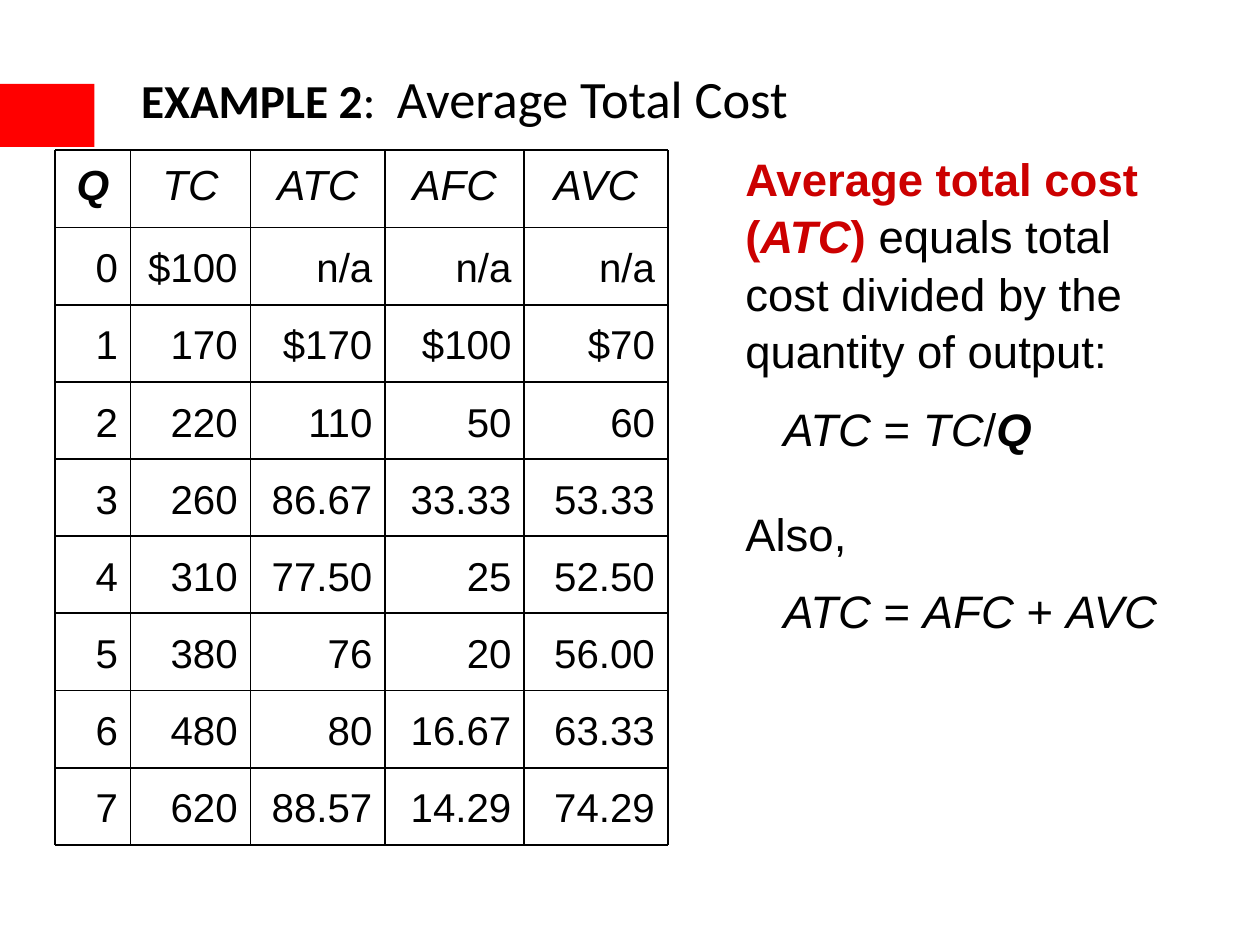
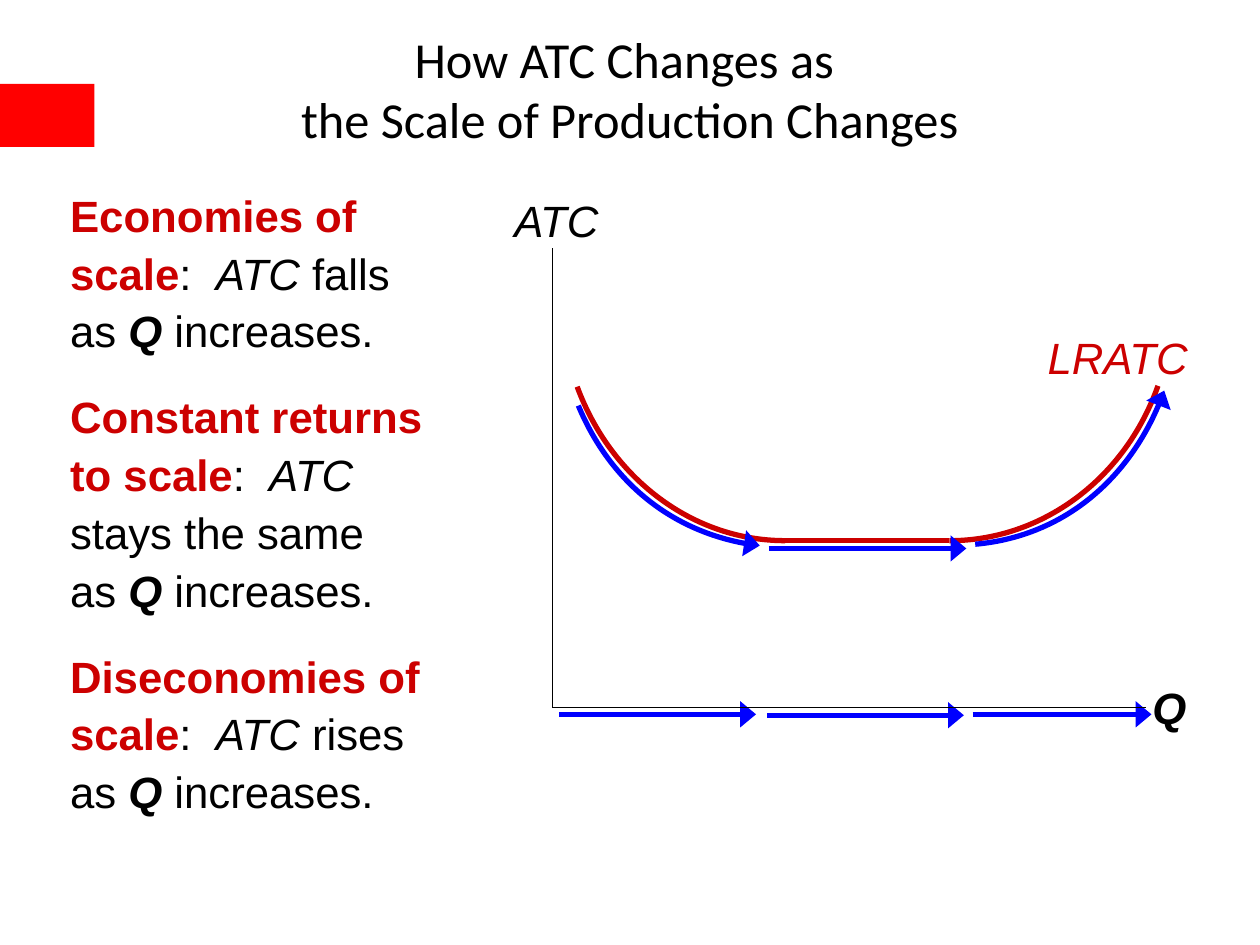
from dataclasses import dataclass
from itertools import accumulate
from typing import NamedTuple

import pptx
import pptx.util
from lxml import etree
from pptx.dml.color import RGBColor
from pptx.enum.shapes import MSO_CONNECTOR, MSO_SHAPE
from pptx.enum.text import MSO_ANCHOR, PP_ALIGN
from pptx.oxml.ns import qn
from pptx.util import Pt


@dataclass(frozen=True)
class Theme:
    black: str = "000000"
    band: str = "FF0000"
    red: str = "CC0000"
    blue: str = "0000FF"
    title_font: str = "Calibri"
    body_font: str = "Arial"
    title: float = 30
    title_lead: float = 27
    title_two_lines: float = 28.8
    body: float = 26
    notes: float = 25
    header: float = 24
    value: float = 23
    grid: float = 1
    axis: float = 0.75
    curve: float = 3


THEME = Theme()
NO_TABLE_STYLE = "{2D5ABB26-0587-4C30-8999-92F81FD0307C}"


class Box(NamedTuple):
    left: float
    top: float
    width: float
    height: float


class Span(NamedTuple):
    text: str
    bold: bool = False
    italic: bool = False
    color: str = THEME.black
    size: float | None = None


class Para(NamedTuple):
    spans: list[Span]
    indent: float = 0


class Style(NamedTuple):
    size: float
    font: str = THEME.body_font
    align: PP_ALIGN = PP_ALIGN.LEFT
    anchor: MSO_ANCHOR = MSO_ANCHOR.TOP
    line_spacing: float = 1
    space_before: float = 0


class Stroke(NamedTuple):
    color: str
    width: float
    arrow: bool = False


class Segment(NamedTuple):
    x1: float
    y1: float
    x2: float
    y2: float
    stroke: Stroke


class Curve(NamedTuple):
    """A cubic Bezier through four control points."""
    points: tuple[tuple[float, float], ...]
    stroke: Stroke


LRATC = Stroke(THEME.red, THEME.curve)
ARROW = Stroke(THEME.blue, THEME.curve, arrow=True)
AXIS = Stroke(THEME.black, THEME.axis)
GRID = Stroke(THEME.black, THEME.grid)
TITLE = Style(THEME.title, THEME.title_font, anchor=MSO_ANCHOR.MIDDLE)
LABEL = Style(THEME.notes)
Q = Span("Q", bold=True, italic=True)


def italic(text: str, color: str = THEME.black) -> Span:
    return Span(text, italic=True, color=color)


def term(text: str, is_italic: bool = False) -> Span:
    return Span(text, bold=True, italic=is_italic, color=THEME.red)


def fill_paragraph(p, spans: list[Span], style: Style) -> None:
    p.alignment = style.align
    p.line_spacing = style.line_spacing
    for span in spans:
        for i, line in enumerate(span.text.split("\n")):
            if i:
                p.add_line_break()
            r = p.add_run()
            r.text = line
            r.font.name = style.font
            r.font.size = Pt(span.size or style.size)
            r.font.bold = span.bold
            r.font.italic = span.italic
            r.font.color.rgb = RGBColor.from_string(span.color)


def add_text(s, box: Box, paras: list[Para], style: Style) -> None:
    tf = s.shapes.add_textbox(*map(Pt, box)).text_frame
    tf.word_wrap = True
    tf.vertical_anchor = style.anchor
    for i, para in enumerate(paras):
        p = tf.add_paragraph() if i else tf.paragraphs[0]
        if i:
            p.space_before = Pt(style.space_before)
        if para.indent:
            p._p.get_or_add_pPr().set("marL", str(Pt(para.indent)))
        fill_paragraph(p, para.spans, style)


def apply_stroke(sp, stroke: Stroke) -> None:
    sp.line.color.rgb = RGBColor.from_string(stroke.color)
    sp.line.width = Pt(stroke.width)
    sp_pr = sp.element.spPr
    if stroke.arrow:
        etree.SubElement(sp_pr.find(qn("a:ln")), qn("a:tailEnd"),
                         type="triangle", w="lg", len="med")
    etree.SubElement(sp_pr, qn("a:effectLst"))


def add_segment(s, seg: Segment) -> None:
    ends = map(Pt, (seg.x1, seg.y1, seg.x2, seg.y2))
    apply_stroke(s.shapes.add_connector(MSO_CONNECTOR.STRAIGHT, *ends), seg.stroke)


def add_curve(s, curve: Curve) -> None:
    """Outline the control points, then join them into one Bezier command."""
    start, *others = [tuple(map(Pt, point)) for point in curve.points]
    builder = s.shapes.build_freeform(*start)
    builder.add_line_segments(others, close=False)
    sp = builder.convert_to_shape()
    lines = list(sp.element.iter(qn("a:lnTo")))
    outline = lines[0].getparent()
    bezier = etree.SubElement(outline, qn("a:cubicBezTo"))
    for line in lines:
        bezier.append(line[0])
        outline.remove(line)
    sp.fill.background()
    apply_stroke(sp, curve.stroke)


def new_slide(prs, title: list[Span], box: Box, style: Style):
    """Add a blank slide with the red side band and its title."""
    s = prs.slides.add_slide(prs.slide_layouts[6])
    band = s.shapes.add_shape(MSO_SHAPE.RECTANGLE, *map(Pt, (0, 48, 54, 36)))
    band.shadow.inherit = False
    band.fill.solid()
    band.fill.fore_color.rgb = RGBColor.from_string(THEME.band)
    band.line.fill.background()
    add_text(s, box, [Para(title)], style)
    return s


def add_rules(s, box: Box, widths: tuple[float, ...], row_height: float) -> None:
    """Rule every row and column edge of the table."""
    right, bottom = box.left + box.width, box.top + box.height
    for i in range(round(box.height / row_height) + 1):
        y = box.top + i * row_height
        add_segment(s, Segment(box.left, y, right, y, GRID))
    for x in accumulate(widths, initial=box.left):
        add_segment(s, Segment(x, box.top, x, bottom, GRID))


def add_cost_table(s) -> None:
    headers = [Q] + [italic(name) for name in ("TC", "ATC", "AFC", "AVC")]
    rows = [
        ("0", "$100", "n/a", "n/a", "n/a"),
        ("1", "170", "$170", "$100", "$70"),
        ("2", "220", "110", "50", "60"),
        ("3", "260", "86.67", "33.33", "53.33"),
        ("4", "310", "77.50", "25", "52.50"),
        ("5", "380", "76", "20", "56.00"),
        ("6", "480", "80", "16.67", "63.33"),
        ("7", "620", "88.57", "14.29", "74.29"),
    ]
    grid = [headers] + [[Span(value) for value in row] for row in rows]
    widths = (43, 68.5, 77, 79.5, 82)
    row_height = 44.1
    header_style = Style(THEME.header, align=PP_ALIGN.CENTER, line_spacing=1.05)
    value_style = Style(THEME.value, align=PP_ALIGN.RIGHT,
                        anchor=MSO_ANCHOR.MIDDLE, line_spacing=1.05)
    box = Box(31.6, 85.9, sum(widths), row_height * len(grid))
    frame = s.shapes.add_table(len(grid), len(widths), *map(Pt, box))
    table = frame.table
    table.first_row = table.horz_banding = False
    frame.element.find(".//" + qn("a:tableStyleId")).text = NO_TABLE_STYLE
    for column, width in zip(table.columns, widths):
        column.width = Pt(width)
    for i, spans in enumerate(grid):
        table.rows[i].height = Pt(row_height)
        style = value_style if i else header_style
        for j, span in enumerate(spans):
            cell = table.cell(i, j)
            cell.fill.background()
            cell.vertical_anchor = style.anchor
            cell.margin_top = Pt(5.6)
            fill_paragraph(cell.text_frame.paragraphs[0], [span], style)
    add_rules(s, box, widths, row_height)


def build_example(prs) -> None:
    title = [Span("EXAMPLE 2", bold=True, size=THEME.title_lead),
             Span(":  ", size=THEME.title_lead), Span("Average Total Cost")]
    s = new_slide(prs, title, Box(73.5, 30, 508, 51), TITLE)
    add_cost_table(s)
    style = Style(THEME.body, line_spacing=1.05, space_before=11.7)
    formula_indent = 21.7
    add_text(s, Box(418.8, 81.2, 267, 192), [
        Para([term("Average total cost ("), term("ATC", True), term(")"),
              Span(" equals total cost divided by the quantity of output:")]),
        Para([italic("ATC"), Span(" = "), italic("TC"), Span("/"), Q], formula_indent),
    ], style)
    add_text(s, Box(418.8, 283.8, 278, 96), [
        Para([Span("Also,")]),
        Para([italic("ATC"), Span(" = "), italic("AFC"), Span(" + "), italic("AVC")],
             formula_indent),
    ], style)


def build_scale(prs) -> None:
    title = [Span("How ATC Changes as \nthe Scale of Production Changes",
                  size=THEME.title_two_lines)]
    s = new_slide(prs, title, Box(0, 20, 720, 61),
                  TITLE._replace(align=PP_ALIGN.CENTER))

    effects = {"Economies of scale": "falls",
               "Constant returns to scale": "stays the same",
               "Diseconomies of scale": "rises"}
    paras = [Para([term(name), Span(":  "), italic("ATC"), Span(f" {effect} \nas "),
                   Q, Span(" increases.")]) for name, effect in effects.items()]
    add_text(s, Box(33, 101.3, 230, 392), paras,
             Style(THEME.notes, line_spacing=1.1, space_before=16.25))

    curves = [
        Curve(((448.6, 309), (396, 309), (349.2, 273.6), (329.8, 221)), LRATC),
        Curve(((661.7, 220.5), (643, 273.6), (595.4, 309), (542.5, 309)), LRATC),
        Curve(((330.5, 231.8), (349.2, 276.5), (388.8, 306.7), (434.2, 311.8)), ARROW),
        Curve(((557.3, 311), (606.2, 306.7), (648, 272.2), (665.3, 223.2)), ARROW),
    ]
    segments = [
        Segment(448.6, 309, 542.5, 309, LRATC),
        Segment(439.2, 313.4, 552.2, 313.4, ARROW),
        Segment(319.7, 408.2, 432, 408.2, ARROW),
        Segment(438.5, 408.7, 550.8, 408.7, ARROW),
        Segment(555.8, 408.2, 658, 408.2, ARROW),
        Segment(315.7, 142, 315.7, 404.2, AXIS),
        Segment(315.7, 404.2, 655, 404.2, AXIS),
    ]
    for curve in curves:
        add_curve(s, curve)
    for segment in segments:
        add_segment(s, segment)

    add_text(s, Box(591.6, 185.6, 101.5, 37.5), [Para([italic("LRATC", THEME.red)])],
             LABEL)
    add_text(s, Box(651.5, 385.5, 42, 37.5), [Para([Q])], LABEL)
    add_text(s, Box(277.6, 107.1, 71.5, 37.5), [Para([italic("ATC")])],
             LABEL._replace(align=PP_ALIGN.RIGHT))


def main() -> None:
    prs = pptx.Presentation()
    prs.slide_width, prs.slide_height = Pt(720), Pt(540)
    build_example(prs)
    build_scale(prs)
    prs.save("out.pptx")


if __name__ == "__main__":
    main()
